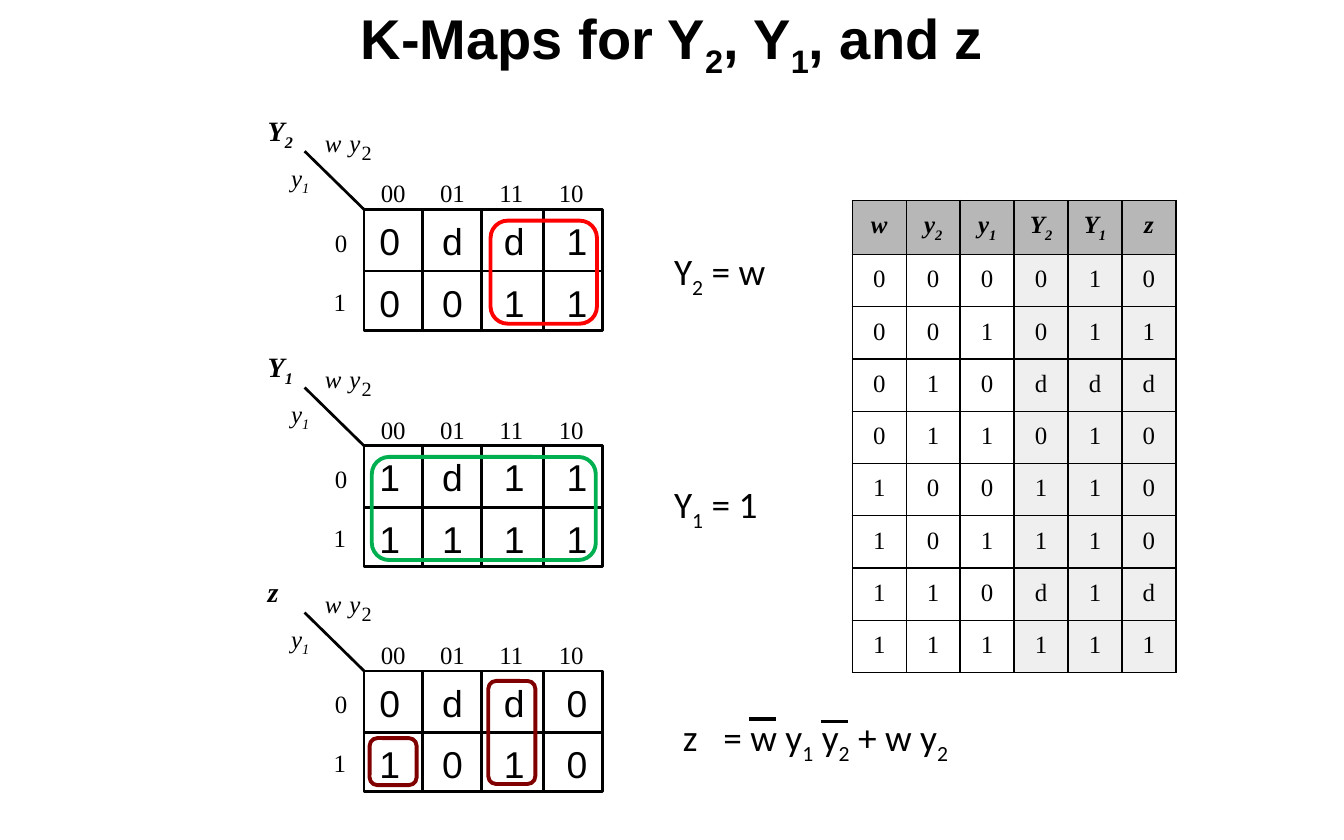
import pptx
import pptx.util
import pptx.dml.color
import pptx.enum.shapes
import pptx.enum.text
import pptx.oxml.ns
from lxml import etree

Inches = pptx.util.Inches
Pt = pptx.util.Pt
RGBColor = pptx.dml.color.RGBColor
Kind = pptx.enum.shapes.MSO_SHAPE
Align = pptx.enum.text.PP_ALIGN
Anchor = pptx.enum.text.MSO_ANCHOR
qn = pptx.oxml.ns.qn

BLACK = RGBColor(0, 0, 0)
RED = RGBColor(0xFF, 0, 0)
GREEN = RGBColor(0, 0xB0, 0x50)
MAROON = RGBColor(0x80, 0, 0)
GREY = RGBColor(0xB7, 0xB7, 0xB7)
PALE = RGBColor(0xEF, 0xEF, 0xEF)
SERIF = "Times New Roman"

TITLE = "K-Maps for Y_2, Y_1, and z"
HEADS = ["w", "y_2", "y_1", "Y_2", "Y_1", "z"]
STATES = ["000010", "001011", "010ddd", "011010",
          "100110", "101110", "110d1d", "111111"]
CODES = ["00", "01", "11", "10"]
MAPS = [
    ("Y_2", 1.87, ["0dd1", "0011"], [(1.13, 0.1, 0.95, 0.92, RED)]),
    ("Y_1", 3.98, ["1d11", "1111"], [(0.07, 0.1, 2, 0.92, GREEN)]),
    ("z", 5.99, ["0dd0", "1010"],
     [(1.11, 0.09, 0.42, 0.92, MAROON), (0.05, 0.6, 0.42, 0.42, MAROON)]),
]
SUMS = [
    ("Y_2 = w", 5.92, 2.17, 1.04),
    ("Y_1 = 1", 5.92, 4.25, 0.97),
    ("z\t= w y_1 y_2 + w y_2", 6, 6.33, 2.63),
]
BARS = [(6.69, 6.42), (7.33, 6.44)]
LEFT = 3.25
SPLIT = 1.05
WIDE = 2.13
HIGH = 1.08


def write(par, text, size, face, bold=False, slant=False):
    font = par.font
    font.size, font.name = Pt(size), face
    font.bold, font.italic = bold, slant
    font.color.rgb = BLACK
    first, *rest = text.split("_")
    par.add_run().text = first
    for part in rest:
        sub = par.add_run()
        sub.text = part[0]
        sub.font._element.set("baseline", "-25000")
        if part[1:]:
            par.add_run().text = part[1:]


def label(shapes, text, x, y, w, h, size=16, face=SERIF,
          pad=0, bold=False, slant=False):
    box = shapes.add_textbox(Inches(x), Inches(y), Inches(w), Inches(h))
    frame = box.text_frame
    frame.word_wrap = True
    frame.margin_left = Inches(pad)
    frame.margin_top = frame.margin_bottom = Inches(pad / 2)
    frame.margin_right = 0
    write(frame.paragraphs[0], text, size, face, bold, slant)
    return frame


def tabs(par, stops):
    tree = etree.SubElement(par._p.get_or_add_pPr(), qn("a:tabLst"))
    for stop in stops:
        etree.SubElement(tree, qn("a:tab"), pos=str(Inches(stop)), algn="l")
    props = par._p.pPr
    base = props.find(qn("a:defRPr"))
    if base is not None:
        base.addprevious(tree)


def line(shapes, x1, y1, x2, y2, width=1.75):
    rule = shapes.add_connector(pptx.enum.shapes.MSO_CONNECTOR.STRAIGHT,
                                Inches(x1), Inches(y1), Inches(x2), Inches(y2))
    rule.line.color.rgb = BLACK
    rule.line.width = Pt(width)
    etree.SubElement(rule._element.spPr, qn("a:effectLst"))


def frame(shapes, kind, x, y, w, h, color, width):
    box = shapes.add_shape(kind, Inches(x), Inches(y), Inches(w), Inches(h))
    box.shadow.inherit = False
    box.fill.background()
    box.line.color.rgb = color
    box.line.width = Pt(width)


def draw_map(slide, name, top, rows, loops):
    shapes = slide.shapes.add_group_shape().shapes
    for x, w in [(LEFT, SPLIT), (LEFT + SPLIT, WIDE - SPLIT)]:
        frame(shapes, Kind.RECTANGLE, x, top, w, HIGH, BLACK, 1.75)
        line(shapes, x, top + 0.55, x + w, top + 0.55)
    for x in (3.77, 4.85):
        line(shapes, x, top, x, top + HIGH)
    line(shapes, LEFT - 0.53, top - 0.52, LEFT, top)
    label(shapes, "y_1", 2.6, top - 0.42, 0.2, 0.27, slant=True)
    for i, code in enumerate(CODES):
        label(shapes, code, 3.4 + 0.53 * i, top - 0.28, 0.36, 0.27)
    for i, digit in enumerate("01"):
        label(shapes, digit, 2.99 - 0.01 * i, top + 0.16 + 0.53 * i, 0.17, 0.27)
    label(shapes, "w", 2.9, top - 0.73, 0.15, 0.27, slant=True)
    label(shapes, "y", 3.12, top - 0.73, 0.15, 0.27, slant=True)
    label(shapes, "2", 3.23, top - 0.62, 0.14, 0.22, size=13)
    label(shapes, name, 2.39, top - 0.86, 0.33, 0.34, size=18,
          bold=True, slant=True)
    body = label(shapes, "\t".join(rows[0]), 3.29, top + 0.03, 2.07, 1.04,
                 size=24, face="Arial", pad=0.1)
    low = body.add_paragraph()
    low.space_before = Pt(11)
    write(low, "\t".join(rows[1]), 24, "Arial")
    for par in body.paragraphs:
        tabs(par, [0.56, 1.11, 1.67])
    for x, y, w, h, color in loops:
        frame(slide.shapes, Kind.ROUNDED_RECTANGLE,
              LEFT + x, top + y, w, h, color, 2.5)


def fill_cell(cell, text, fill, head):
    cell.margin_left = cell.margin_right = Inches(0.1)
    cell.margin_top = cell.margin_bottom = Inches(0.1)
    if fill is None:
        cell.fill.background()
    else:
        cell.fill.solid()
        cell.fill.fore_color.rgb = fill
    par = cell.text_frame.paragraphs[0]
    par.alignment = Align.CENTER
    write(par, text, 16, SERIF, head, head)
    props = cell._tc.get_or_add_tcPr()
    for i, side in enumerate("LRTB"):
        edge = etree.Element(qn("a:ln" + side), w=str(Pt(1)))
        paint = etree.SubElement(edge, qn("a:solidFill"))
        etree.SubElement(paint, qn("a:srgbClr"), val=str(BLACK))
        props.insert(i, edge)


def draw_table(slide):
    data = [HEADS] + STATES
    grid = slide.shapes.add_table(len(data), len(HEADS), Inches(7.61),
                                  Inches(1.79), Inches(2.89), Inches(4.2)).table
    grid.first_row = grid.horz_banding = False
    for r, row in enumerate(data):
        for c, text in enumerate(row):
            fill = GREY if r == 0 else PALE if c > 2 else None
            fill_cell(grid.cell(r, c), text, fill, r == 0)


def main():
    deck = pptx.Presentation()
    deck.slide_width, deck.slide_height = Inches(12), Inches(7.5)
    slide = deck.slides.add_slide(deck.slide_layouts[5])
    title = slide.shapes.title
    title.left, title.top = Inches(1), Inches(0)
    title.width, title.height = Inches(10), Inches(0.75)
    title.text_frame.vertical_anchor = Anchor.MIDDLE
    head = title.text_frame.paragraphs[0]
    head.alignment = Align.CENTER
    write(head, TITLE, 36, "Arial", bold=True)
    draw_table(slide)
    for item in MAPS:
        draw_map(slide, *item)
    for text, x, y, w in SUMS:
        body = label(slide.shapes, text, x, y, w, 0.51,
                     size=24, face="Calibri", pad=0.1)
        if "\t" in text:
            tabs(body.paragraphs[0], [0.36])
    for x, y in BARS:
        line(slide.shapes, x, y, x + 0.24, y, 2.25)
    deck.save("out.pptx")


if __name__ == "__main__":
    main()
